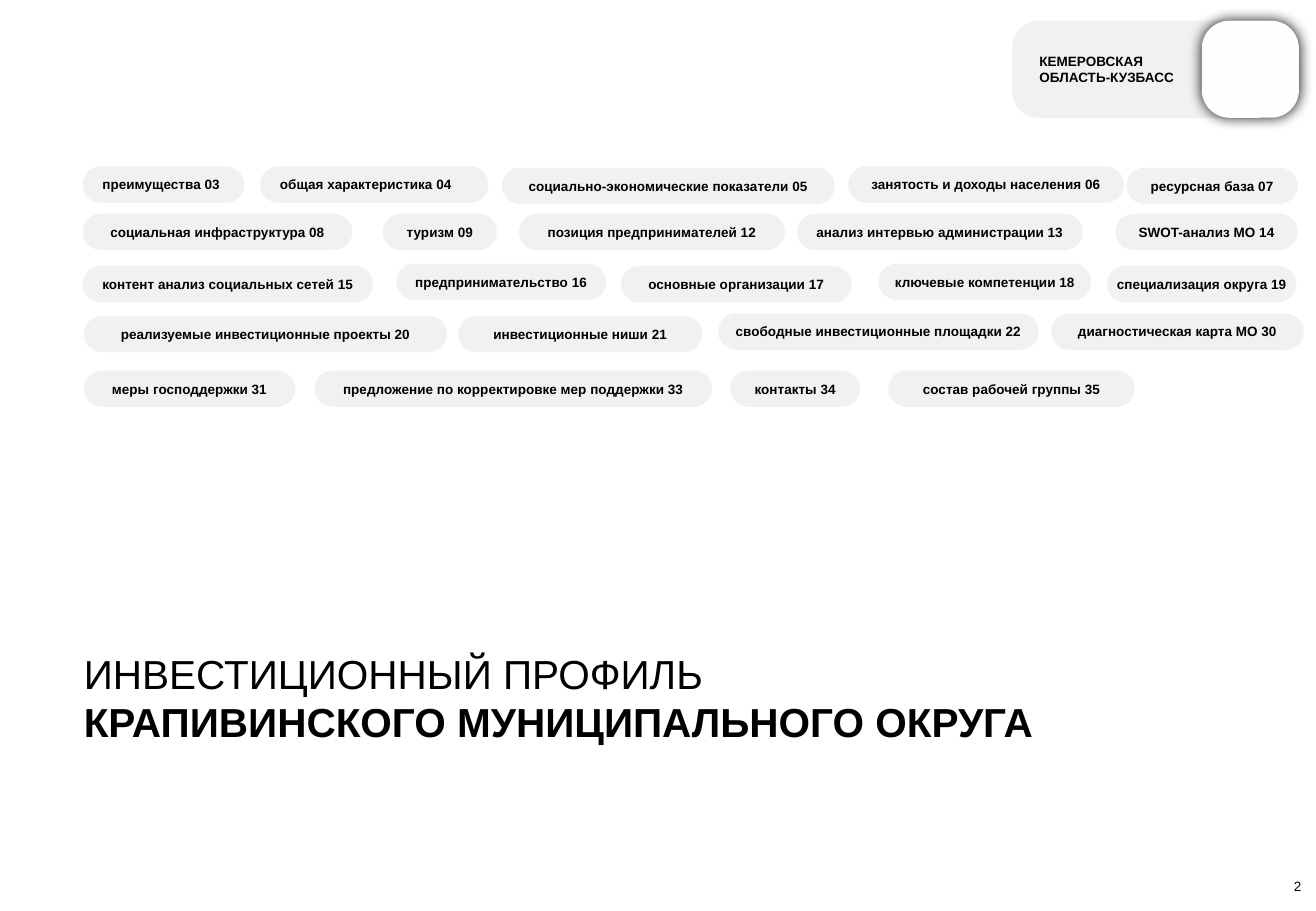
from dataclasses import dataclass

from lxml import etree
from pptx import Presentation
from pptx import util as u
from pptx.dml.color import RGBColor
from pptx.enum import shapes, text
from pptx.oxml import ns


@dataclass(frozen=True)
class Theme:
    font: str = "Arial"
    ink: str = "000000"
    pill: str = "F1F1F1"
    emblem: str = "FEFEFE"
    small: float = 8
    title: float = 24


LEFT, CENTER, RIGHT = text.PP_ALIGN.LEFT, text.PP_ALIGN.CENTER, text.PP_ALIGN.RIGHT
TOP, MIDDLE, BOTTOM = text.MSO_ANCHOR.TOP, text.MSO_ANCHOR.MIDDLE, text.MSO_ANCHOR.BOTTOM
PILL_HEIGHT = 21.6
PILL_INDENT = 8.64

# Each row: top, then (label, left, width, vertical shift, alignment)
CONTENTS = [
    (98.64, [
        ("преимущества 03", 48.96, 95.76, 0, LEFT),
        ("общая характеристика 04", 154.08, 135.36, 0, LEFT),
        ("социально-экономические показатели 05", 297.36, 197.28, 0.72, CENTER),
        ("занятость и доходы населения 06", 502.56, 163.44, 0, CENTER),
        ("ресурсная база 07", 667.44, 101.52, 0.72, CENTER),
    ]),
    (126.72, [
        ("социальная инфраструктура 08", 48.96, 159.84, 0, CENTER),
        ("туризм 09", 226.8, 67.68, 0, CENTER),
        ("позиция предпринимателей 12", 307.44, 157.68, 0, CENTER),
        ("анализ интервью администрации 13", 472.32, 169.2, 0, CENTER),
        ("SWOT-анализ МО 14", 660.96, 108, 0, CENTER),
    ]),
    (157.68, [
        ("контент анализ социальных сетей 15", 48.96, 172.08, 0, CENTER),
        ("предпринимательство 16", 234.72, 124.56, -1.44, CENTER),
        ("основные организации 17", 367.92, 136.8, 0, CENTER),
        ("ключевые компетенции 18", 520.56, 126, -1.44, CENTER),
        ("специализация округа 19", 655.92, 112.32, 0, CENTER),
    ]),
    (187.2, [
        ("реализуемые инвестиционные проекты 20", 49.68, 215.28, 0, CENTER),
        ("инвестиционные ниши 21", 271.44, 144.72, 0, CENTER),
        ("свободные инвестиционные площадки 22", 425.52, 190.08, -1.44, CENTER),
        ("диагностическая карта МО 30", 622.8, 149.76, -1.44, CENTER),
    ]),
    (219.6, [
        ("меры господдержки 31", 49.68, 125.28, 0, CENTER),
        ("предложение по корректировке мер поддержки 33", 186.48, 235.44, 0, CENTER),
        ("контакты 34", 432.72, 77.04, 0, CENTER),
        ("состав рабочей группы 35", 526.32, 146.16, 0, CENTER),
    ]),
]


class ProfileSlide:
    def __init__(self, slide, theme):
        self.slide = slide
        self.theme = theme

    def set_text(self, shape, runs, size, align, anchor, insets=(0, 0, 0, 0)):
        """Fill a shape with one paragraph; runs are (words, bold) pairs."""
        frame = shape.text_frame
        sides = ("margin_left", "margin_top", "margin_right", "margin_bottom")
        layout = {side: u.Pt(inset) for side, inset in zip(sides, insets)}
        layout |= {"word_wrap": True, "vertical_anchor": anchor}
        for name, value in layout.items():
            setattr(frame, name, value)
        paragraph = frame.paragraphs[0]
        paragraph.alignment = align
        for words, bold in runs:
            run = paragraph.add_run()
            run.text = words
            style = {"name": self.theme.font, "size": u.Pt(size), "bold": bold}
            for name, value in style.items():
                setattr(run.font, name, value)
            run.font.color.rgb = RGBColor.from_string(self.theme.ink)

    def rounded(self, box, fill, rounding):
        shape = self.slide.shapes.add_shape(
            shapes.MSO_SHAPE.ROUNDED_RECTANGLE, *map(u.Pt, box))
        shape.adjustments[0] = rounding
        shape.shadow.inherit = False
        shape.fill.solid()
        shape.fill.fore_color.rgb = RGBColor.from_string(fill)
        shape.line.fill.background()
        return shape

    def pill(self, label, box, align):
        shape = self.rounded(box, self.theme.pill, 0.5)
        indent = PILL_INDENT if align == LEFT else 0
        self.set_text(shape, [(label, True)], self.theme.small, align, MIDDLE,
                      (indent, 0, 0, 0))

    def region_badge(self, region, box):
        badge = self.rounded(box, self.theme.pill, 0.275)
        self.set_text(badge, [(region, True)], self.theme.small, LEFT, MIDDLE,
                      (11.52, 3.6, 56.88, 3.6))

    def emblem(self, box, blur, opacity):
        """Draw an empty tile with a soft shadow all round."""
        tile = self.rounded(box, self.theme.emblem, 0.286)
        effects = tile._element.spPr.find(ns.qn("a:effectLst"))
        shadow = etree.SubElement(effects, ns.qn("a:outerShdw"),
                                  blurRad=str(u.Pt(blur)), dist="0", dir="0",
                                  algn="ctr", rotWithShape="0")
        color = etree.SubElement(shadow, ns.qn("a:srgbClr"), val=self.theme.ink)
        etree.SubElement(color, ns.qn("a:alpha"), val=str(opacity * 1000))

    def text_box(self, runs, box, size, align, anchor):
        shape = self.slide.shapes.add_textbox(*map(u.Pt, box))
        self.set_text(shape, runs, size, align, anchor)


def main():
    deck = Presentation()
    deck.slide_width, deck.slide_height = u.Pt(779.76), u.Pt(540)
    theme = Theme()
    page = ProfileSlide(deck.slides.add_slide(deck.slide_layouts[6]), theme)

    for top, sections in CONTENTS:
        for label, left, width, shift, align in sections:
            page.pill(label, (left, top + shift, width, PILL_HEIGHT), align)

    page.region_badge("КЕМЕРОВСКАЯ ОБЛАСТЬ-КУЗБАСС", (599.76, 12.24, 169.92, 57.6))
    page.emblem((712.08, 12.24, 57.6, 57.6), blur=8.4, opacity=92)
    title = [("ИНВЕСТИЦИОННЫЙ ПРОФИЛЬ ", False),
             ("КРАПИВИНСКОГО МУНИЦИПАЛЬНОГО ОКРУГА", True)]
    page.text_box(title, (49.68, 384.48, 576, 58.32), theme.title, LEFT, TOP)
    page.text_box([("2", False)], (713.52, 520.56, 57.6, 9.36),
                  theme.small, RIGHT, BOTTOM)
    deck.save("out.pptx")


if __name__ == "__main__":
    main()
